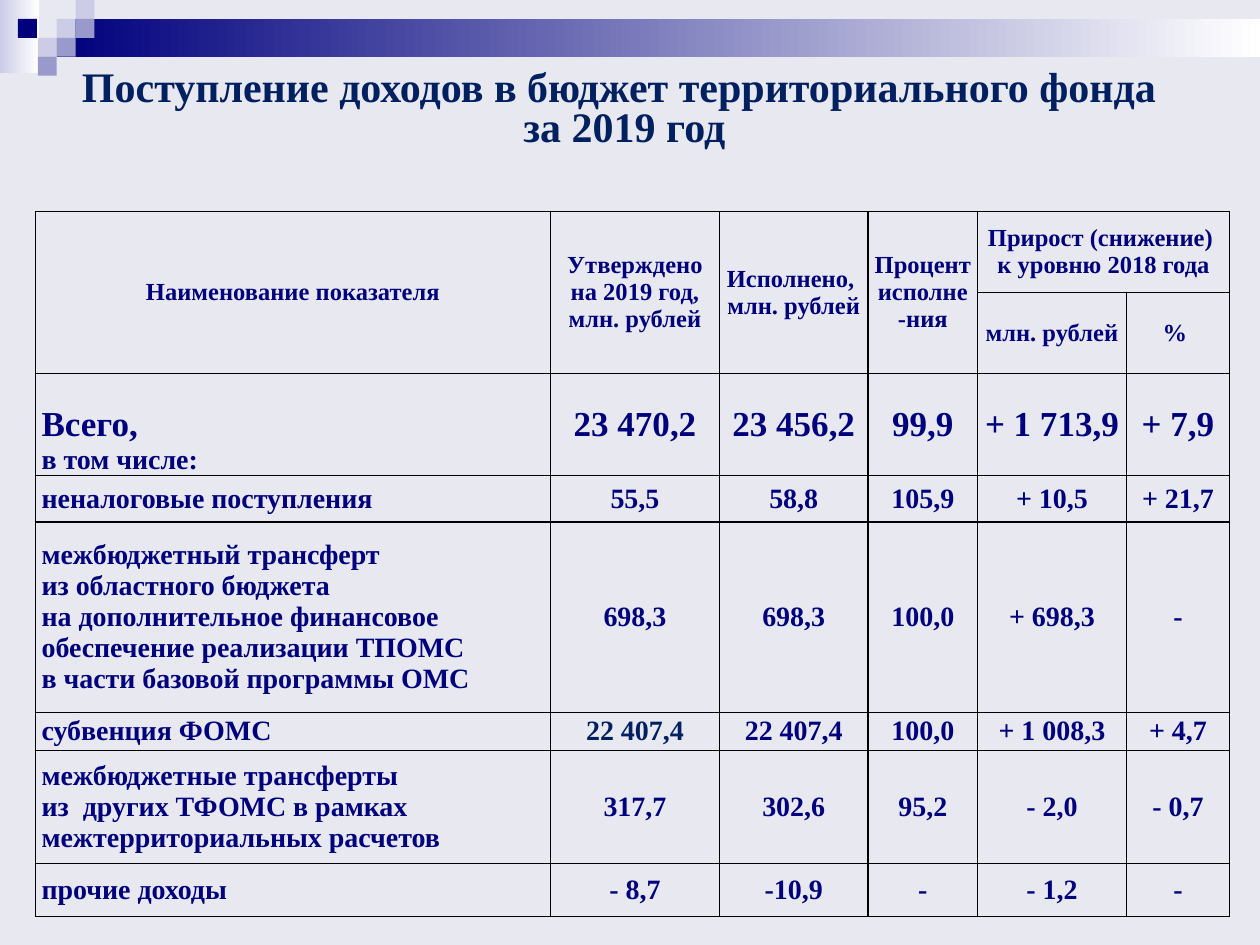
from lxml.etree import SubElement
from pptx import Presentation
from pptx.dml.color import RGBColor
from pptx.enum.shapes import MSO_SHAPE
from pptx.enum.text import MSO_ANCHOR, MSO_AUTO_SIZE, PP_ALIGN
from pptx.oxml.ns import qn
from pptx.util import Inches, Pt

COLORS = {"background": "E8E8F1", "navy": "00007D", "title": "002060",
          "pale": "CCCCE6", "violet": "9999CC", "white": "FFFFFF", "border": "000000"}
FONT = "Times New Roman"

TITLE = "Поступление доходов в бюджет территориального фонда \nза 2019 год"

# left, top, width, height, start color of a fade to white
BANDS = [(0, 0, 0.31, 0.58, "pale"), (0.45, 0.15, 9.55, 0.3, "navy")]
TILE = 0.15
# column, row, color on the tile grid
TILES = [(3, 1, "pale"), (4, 0, "pale"), (4, 1, "violet"), (2, 2, "pale"),
         (0.95, 1, "navy"), (3, 2, "violet"), (2, 3, "violet")]

TABLE_LEFT, TABLE_TOP = 0.28, 1.68
COLUMN_WIDTHS = [4.09, 1.34, 1.18, 0.87, 1.18, 0.82]
ROW_HEIGHTS = [0.64, 0.64, 0.81, 0.37, 1.51, 0.3, 0.9, 0.42]
HEADER_ROWS, TOTAL_ROW = 2, 2
HEADER_SIZE, TOTAL_SIZE, BODY_SIZE = 14, 20, 16
MERGES = [((0, column), (1, column)) for column in range(4)] + [((0, 4), (0, 5))]
TITLE_COLORED_CELL = (5, 1)

# Each cell is a list of paragraphs; a line feed is a break inside a paragraph.
ROWS = [
    [["Наименование показателя"], ["Утверждено на 2019 год, млн. рублей"],
     ["Исполнено,  ", "млн. рублей"], ["Процент исполне-ния"],
     ["Прирост (снижение) ", "к уровню 2018 года"], None],
    [None, None, None, None, ["млн. рублей"], ["% "]],
    [["Всего, ", "в том числе:"], ["23 470,2"], ["23 456,2"], ["99,9"],
     ["+ 1 713,9"], ["+ 7,9"]],
    [["неналоговые поступления"], ["55,5"], ["58,8"], ["105,9"], ["+ 10,5"], ["+ 21,7"]],
    [["межбюджетный трансферт \nиз областного бюджета \n"
      "на дополнительное финансовое обеспечение реализации ТПОМС \n"
      "в части базовой программы ОМС"],
     ["698,3"], ["698,3"], ["100,0"], ["+ 698,3"], ["-"]],
    [["субвенция ФОМС"], ["22 407,4"], ["22 407,4"], ["100,0"], ["+ 1 008,3"], ["+ 4,7"]],
    [["межбюджетные трансферты  \nиз  других ТФОМС в рамках  межтерриториальных расчетов"],
     ["317,7"], ["302,6"], ["95,2"], ["- 2,0"], ["- 0,7"]],
    [["прочие доходы "], ["- 8,7"], ["-10,9"], ["-"], ["- 1,2"], ["-"]],
]


def rgb(name):
    return RGBColor.from_string(COLORS[name])


def add_rectangle(slide, left, top, width, height):
    shape = slide.shapes.add_shape(MSO_SHAPE.RECTANGLE, Inches(left), Inches(top),
                                   Inches(width), Inches(height))
    shape.shadow.inherit = False
    shape.line.fill.background()
    return shape


def add_decoration(slide):
    for *box, color in BANDS:
        fill = add_rectangle(slide, *box).fill
        fill.gradient()
        fill.gradient_angle = 0
        for stop, position, name in zip(fill.gradient_stops, (0, 1), (color, "white")):
            stop.position = position
            stop.color.rgb = rgb(name)
    for column, row, color in TILES:
        fill = add_rectangle(slide, column * TILE, row * TILE, TILE, TILE).fill
        fill.solid()
        fill.fore_color.rgb = rgb(color)


def write(paragraph, text, size, color, alignment):
    paragraph.alignment = alignment
    for index, line in enumerate(text.split("\n")):
        if index:
            paragraph.add_line_break()
        run = paragraph.add_run()
        run.text = line
        run.font.name = FONT
        run.font.size = Pt(size)
        run.font.bold = True
        run.font.color.rgb = rgb(color)


def add_title(slide):
    title = slide.shapes.title
    title.left, title.top, title.width, title.height = map(Inches, (0.35, 0.52, 9.21, 0.71))
    frame = title.text_frame
    frame.word_wrap = True
    frame.auto_size = MSO_AUTO_SIZE.NONE
    frame.vertical_anchor = MSO_ANCHOR.MIDDLE
    paragraph = frame.paragraphs[0]
    paragraph.line_spacing = 0.8
    write(paragraph, TITLE, 24, "title", PP_ALIGN.CENTER)


def add_borders(cell):
    properties = cell._tc.get_or_add_tcPr()
    for side in ("a:lnL", "a:lnR", "a:lnT", "a:lnB"):
        line = SubElement(properties, qn(side), w=str(Pt(1)))
        fill = SubElement(line, qn("a:solidFill"))
        SubElement(fill, qn("a:srgbClr"), val=COLORS["border"])


def font_size(row, paragraph_index):
    if row < HEADER_ROWS:
        return HEADER_SIZE
    return TOTAL_SIZE if row == TOTAL_ROW and paragraph_index == 0 else BODY_SIZE


def fill_cell(cell, row, column, texts):
    add_borders(cell)
    cell.fill.background()
    cell.margin_left = cell.margin_right = Inches(0.05)
    cell.margin_top = cell.margin_bottom = 0
    is_label = column == 0 and row >= HEADER_ROWS
    cell.vertical_anchor = (MSO_ANCHOR.BOTTOM if is_label and row == TOTAL_ROW
                            else MSO_ANCHOR.MIDDLE)
    alignment = PP_ALIGN.LEFT if is_label else PP_ALIGN.CENTER
    color = "title" if (row, column) == TITLE_COLORED_CELL else "navy"
    frame = cell.text_frame
    for index, text in enumerate(texts or []):
        paragraph = frame.add_paragraph() if index else frame.paragraphs[0]
        write(paragraph, text, font_size(row, index), color, alignment)


def add_income_table(slide):
    table = slide.shapes.add_table(
        len(ROWS), len(COLUMN_WIDTHS), Inches(TABLE_LEFT), Inches(TABLE_TOP),
        Inches(sum(COLUMN_WIDTHS)), Inches(sum(ROW_HEIGHTS))).table
    table.first_row = table.horz_banding = False
    for column, width in zip(table.columns, COLUMN_WIDTHS):
        column.width = Inches(width)
    for row, height in zip(table.rows, ROW_HEIGHTS):
        row.height = Inches(height)
    for first, last in MERGES:
        table.cell(*first).merge(table.cell(*last))
    for row, cells in enumerate(ROWS):
        for column, texts in enumerate(cells):
            fill_cell(table.cell(row, column), row, column, texts)


def main():
    presentation = Presentation()
    presentation.slide_width, presentation.slide_height = Inches(10), Inches(7.5)
    slide = presentation.slides.add_slide(presentation.slide_layouts[5])
    slide.background.fill.solid()
    slide.background.fill.fore_color.rgb = rgb("background")
    add_decoration(slide)
    add_title(slide)
    add_income_table(slide)
    presentation.save("out.pptx")


if __name__ == "__main__":
    main()
